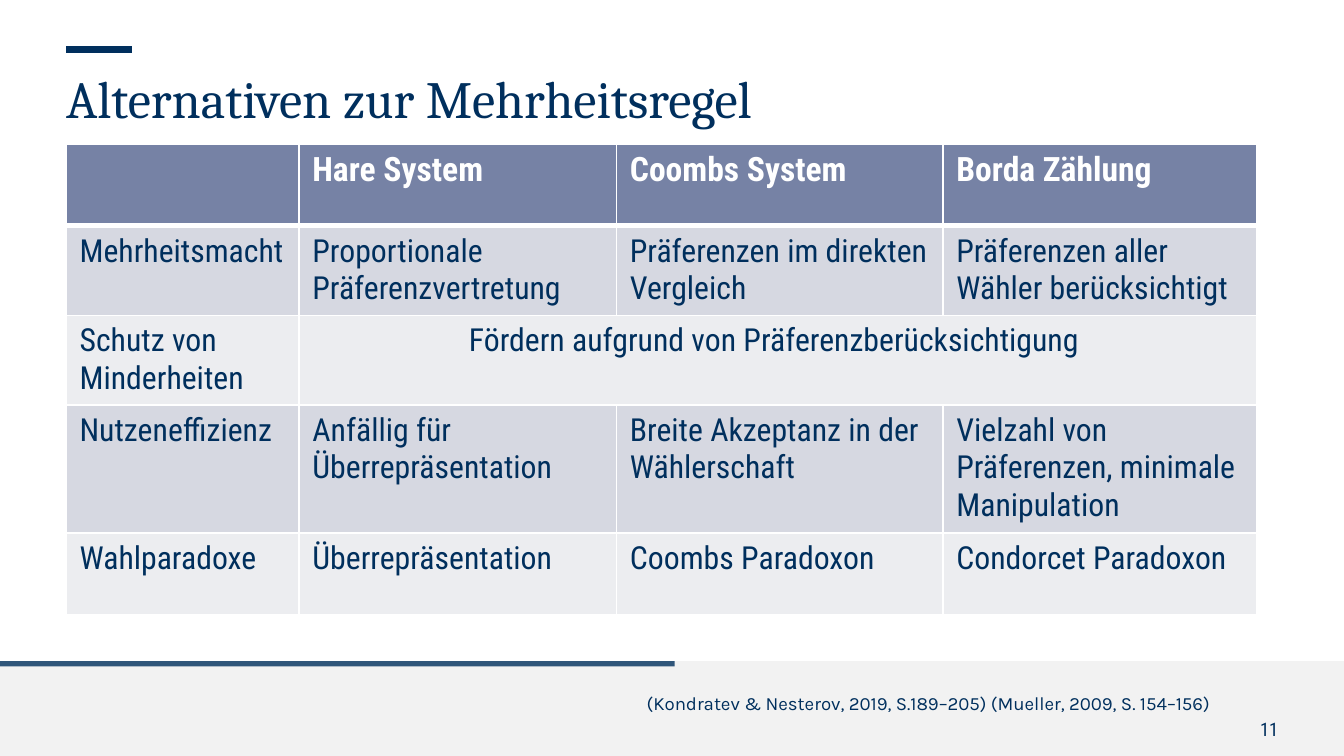
"""Build a slide with a table comparing alternatives to majority rule."""
from lxml import etree
from pptx import Presentation
from pptx import util as u
from pptx.dml.color import RGBColor
from pptx.enum import shapes, text
from pptx.oxml import ns

NAVY, WHITE, GREY = "002F5D", "FFFFFF", "F2F2F2"
HEADER_FILL = "7682A5"
BAND_FILLS = ["D6D8E1", "ECEDF0"]
BODY_FONT = "Roboto Condensed"
LEFT, RIGHT = text.PP_ALIGN.LEFT, text.PP_ALIGN.RIGHT

TEXTS = [
    ("11", (22.89, 13.56, 1.27, 0.43), BODY_FONT, 10, RIGHT),
    ("(Kondratev & Nesterov, 2019, S.189–205) (Mueller, 2009, S. 154–156)",
     (8.33, 13.08, 14.53, 0.46), "Karla", 10, RIGHT),
    ("Alternativen zur Mehrheitsregel", (1.25, 1.25, 23.37, 2.29), "Cambria", 28, LEFT),
]
BARS = [
    ((0, 12.5, 25.4, 1.79), GREY, 100),
    ((0, 12.5, 12.75, 0.1), NAVY, 80),
]
ROWS = [
    ["", "Hare System", "Coombs System", "Borda Zählung"],
    ["Mehrheitsmacht", "Proportionale Präferenzvertretung",
     "Präferenzen im direkten Vergleich", "Präferenzen aller Wähler berücksichtigt"],
    ["Schutz von Minderheiten", "Fördern aufgrund von Präferenzberücksichtigung ", "", ""],
    ["Nutzeneffizienz", "Anfällig für Überrepräsentation",
     "Breite Akzeptanz in der Wählerschaft", "Vielzahl von Präferenzen, minimale Manipulation"],
    ["Wahlparadoxe", "Überrepräsentation", "Coombs Paradoxon", "Condorcet Paradoxon"],
]
TABLE_LEFT, TABLE_TOP = 1.25, 2.72
COLUMN_WIDTHS = [4.4, 6.0, 6.17, 5.93]
ROW_HEIGHTS = [1.55, 1.63, 1.55, 1.55, 1.55]
MERGED_ROW = 2


def color(value):
    return RGBColor.from_string(value)


def place(box):
    return [u.Cm(length) for length in box]


def style(paragraph, font, size, value, bold=False):
    for run in paragraph.runs:
        run.font.name = font
        run.font.size = u.Pt(size)
        run.font.bold = bold
        run.font.color.rgb = color(value)


def add_text(slide, words, box, font, size, alignment):
    frame = slide.shapes.add_textbox(*place(box)).text_frame
    frame.word_wrap = True
    frame.margin_left = frame.margin_right = frame.margin_top = frame.margin_bottom = 0
    frame.text = words
    frame.paragraphs[0].alignment = alignment
    style(frame.paragraphs[0], font, size, NAVY)


def add_bar(slide, box, value, opacity):
    shape = slide.shapes.add_shape(shapes.MSO_SHAPE.RECTANGLE, *place(box))
    shape.shadow.inherit = False
    shape.fill.solid()
    shape.fill.fore_color.rgb = color(value)
    shape.line.fill.background()
    if opacity < 100:
        fill_color = shape.fill._xPr.find(".//" + ns.qn("a:srgbClr"))
        etree.SubElement(fill_color, ns.qn("a:alpha"), val=str(opacity * 1000))


def add_accent(slide):
    line = slide.shapes.add_connector(
        shapes.MSO_CONNECTOR.STRAIGHT, *place((1.25, 0.94, 2.49, 0.94)))
    line.line.color.rgb = color(NAVY)
    line.line.width = u.Pt(3.5)
    etree.SubElement(line._element.spPr, ns.qn("a:effectLst"))


def set_borders(cell, widths):
    properties = cell._tc.get_or_add_tcPr()
    for side, width in zip("LRTB", widths):
        border = etree.SubElement(properties, ns.qn("a:ln" + side), w=str(u.Pt(width)))
        fill = etree.SubElement(border, ns.qn("a:solidFill"))
        etree.SubElement(fill, ns.qn("a:srgbClr"), val=WHITE)


def add_table(slide):
    box = (TABLE_LEFT, TABLE_TOP, sum(COLUMN_WIDTHS), sum(ROW_HEIGHTS))
    table = slide.shapes.add_table(len(ROWS), len(COLUMN_WIDTHS), *place(box)).table
    for column, width in zip(table.columns, COLUMN_WIDTHS):
        column.width = u.Cm(width)
    for index, (row, height) in enumerate(zip(ROWS, ROW_HEIGHTS)):
        table.rows[index].height = u.Cm(height)
        header = index == 0
        fill = HEADER_FILL if header else BAND_FILLS[(index - 1) % 2]
        for position, words in enumerate(row):
            cell = table.cell(index, position)
            set_borders(cell, (1, 1, 3 if index == 1 else 1, 3 if header else 1))
            cell.fill.solid()
            cell.fill.fore_color.rgb = color(fill)
            cell.text_frame.text = words
            style(cell.text_frame.paragraphs[0], BODY_FONT, 18 if header else 17,
                  WHITE if header else NAVY, header)
    merged = table.cell(MERGED_ROW, 1)
    merged.merge(table.cell(MERGED_ROW, len(COLUMN_WIDTHS) - 1))
    merged.text_frame.paragraphs[0].alignment = text.PP_ALIGN.CENTER


def main():
    presentation = Presentation()
    presentation.slide_width, presentation.slide_height = place((25.4, 14.29))
    slide = presentation.slides.add_slide(presentation.slide_layouts[6])
    for bar in BARS:
        add_bar(slide, *bar)
    add_accent(slide)
    for item in TEXTS:
        add_text(slide, *item)
    add_table(slide)
    presentation.save("out.pptx")


if __name__ == "__main__":
    main()
